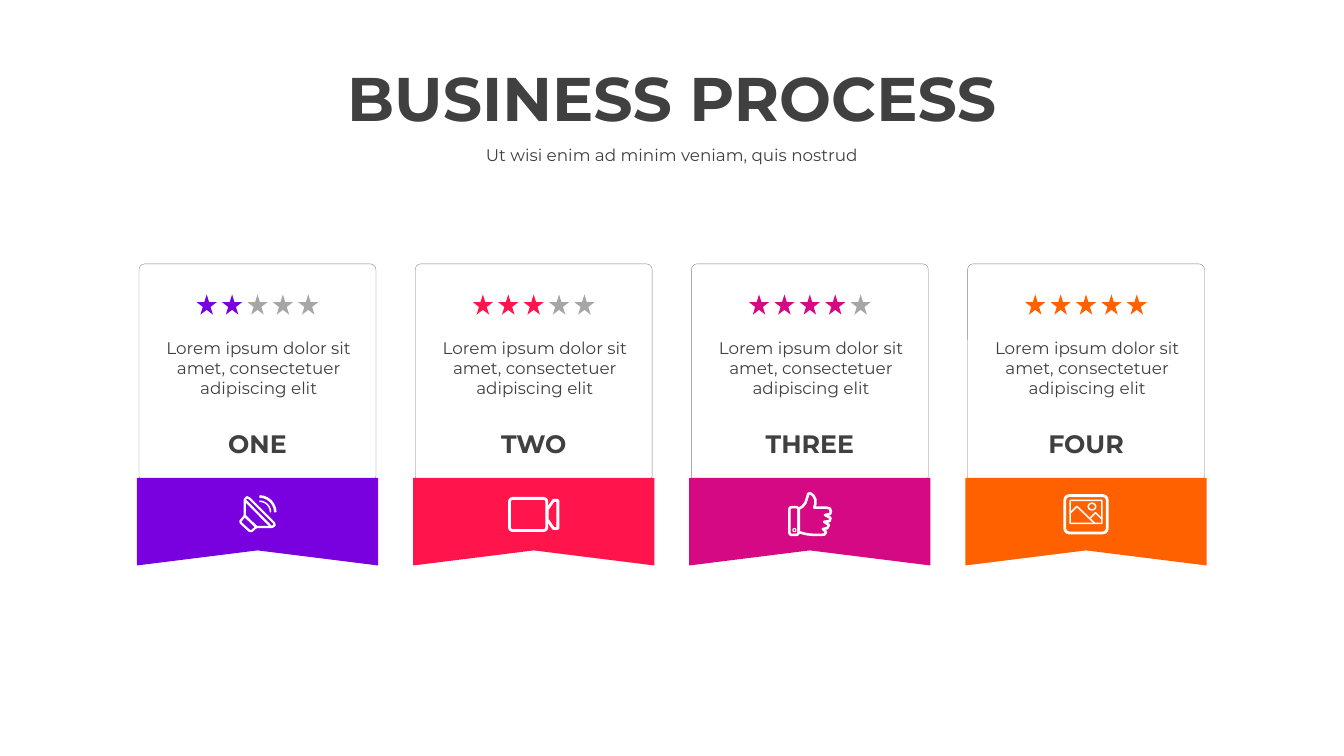
from pptx import Presentation
from pptx.dml.color import RGBColor
from pptx.enum.shapes import MSO_SHAPE as SHAPE
from pptx.enum.text import MSO_ANCHOR as ANCHOR, MSO_AUTO_SIZE as AUTO_SIZE, PP_ALIGN as ALIGN
from pptx.util import Cm, Pt

PURPLE = RGBColor(0x79, 0x00, 0xDF)
RED = RGBColor(0xFF, 0x15, 0x4C)
MAGENTA = RGBColor(0xD5, 0x09, 0x84)
ORANGE = RGBColor(0xFF, 0x60, 0x00)
WHITE = RGBColor(0xFF, 0xFF, 0xFF)
STAR_GREY = RGBColor(0xA6, 0xA6, 0xA6)
BORDER_GREY = RGBColor(0x80, 0x80, 0x80)
TEXT_GREY = RGBColor(0x40, 0x40, 0x40)

SLIDE_W, SLIDE_H = 33.87, 19.05
FIRST_CENTRE, CARD_PITCH = 6.49, 6.96
ICON_Y = 12.95
STAR_COUNT, STAR_PITCH, STAR_SIZE = 5, 0.64, 0.51
BOLD_STROKE, THIN_STROKE = 2, 1.1
DESCRIPTION = "Lorem ipsum dolor sit amet, consectetuer adipiscing elit"


class SlideBuilder:
    """Draws on one slide; lengths are centimetres, x is a horizontal centre."""

    font = "Montserrat"

    def __init__(self, slide):
        self.shapes = slide.shapes

    def paint(self, shape, fill=None, line=None, weight=1):
        shape.shadow.inherit = False
        if fill is None:
            shape.fill.background()
        else:
            shape.fill.solid()
            shape.fill.fore_color.rgb = fill
        if line is None:
            shape.line.fill.background()
        else:
            shape.line.color.rgb = line
            shape.line.width = Pt(weight)

    def preset(self, kind, x, top, width, height, radius=None, **style):
        shape = self.shapes.add_shape(
            kind, Cm(x - width / 2), Cm(top), Cm(width), Cm(height))
        if radius is not None:
            shape.adjustments[0] = radius
        self.paint(shape, **style)

    def outline(self, x, y, points, closed=True, **style):
        start, *rest = [(Cm(x + dx), Cm(y + dy)) for dx, dy in points]
        builder = self.shapes.build_freeform(*start)
        builder.add_line_segments(rest, close=closed)
        self.paint(builder.convert_to_shape(), **style)

    def text(self, words, x, top, width, height, size, bold=False, wrap=True,
             anchor=ANCHOR.TOP, spacing=None, before=0, grow=False):
        box = self.shapes.add_textbox(
            Cm(x - width / 2), Cm(top), Cm(width), Cm(height))
        frame = box.text_frame
        frame.text = words
        frame.word_wrap = wrap
        frame.vertical_anchor = anchor
        frame.auto_size = AUTO_SIZE.SHAPE_TO_FIT_TEXT if grow else AUTO_SIZE.NONE
        paragraph = frame.paragraphs[0]
        paragraph.alignment = ALIGN.CENTER
        paragraph.line_spacing = spacing
        paragraph.space_before = Pt(before)
        font = paragraph.runs[0].font
        font.name, font.size, font.bold = self.font, Pt(size), bold
        font.color.rgb = TEXT_GREY

    def icon_preset(self, kind, x, dy, width, height, weight, radius=None):
        self.preset(kind, x, ICON_Y + dy, width, height, radius,
                    line=WHITE, weight=weight)

    def icon_stroke(self, x, points, weight=BOLD_STROKE, closed=True):
        self.outline(x, ICON_Y, points, closed, line=WHITE, weight=weight)


# Icons, each placed around the centre of its ribbon
def speaker_icon(draw, x):
    cone = [(-0.32, 0.05), (-0.32, -0.36), (-0.27, -0.42), (-0.2, -0.39),
            (0.42, 0.23), (0.43, 0.29), (0.37, 0.33), (-0.03, 0.33)]
    base = [(-0.32, 0.05), (-0.43, 0.18), (-0.42, 0.23),
            (-0.2, 0.43), (-0.14, 0.43), (-0.03, 0.33)]
    draw.icon_stroke(x, cone, 1.6)
    draw.icon_stroke(x, base, 1.6)
    draw.icon_stroke(x, [(-0.3, -0.33), (0.34, 0.32)], 1.6, closed=False)
    for radius, weight in ((0.4, 1.8), (0.28, THIN_STROKE)):
        draw.icon_preset(SHAPE.ARC, x + 0.05, -0.04 - radius,
                         2 * radius, 2 * radius, weight)


def camera_icon(draw, x):
    lens = [(0.34, -0.11), (0.5, -0.34), (0.61, -0.34),
            (0.61, 0.37), (0.5, 0.37), (0.34, 0.14)]
    draw.icon_preset(SHAPE.ROUNDED_RECTANGLE, x - 0.14, -0.39, 0.94, 0.81,
                     BOLD_STROKE, 0.1)
    draw.icon_stroke(x, lens)


def thumb_icon(draw, x):
    hand = [(-0.28, -0.13), (-0.19, -0.18), (-0.11, -0.28), (-0.06, -0.43),
            (-0.04, -0.51), (0.01, -0.52), (0.09, -0.46), (0.14, -0.36),
            (0.14, -0.25), (0.11, -0.16), (0.42, -0.16), (0.51, -0.13),
            (0.53, -0.05), (0.51, 0), (0.38, 0.03), (0.52, 0.1),
            (0.5, 0.18), (0.36, 0.2), (0.48, 0.28), (0.44, 0.36),
            (0.33, 0.38), (0.41, 0.46), (0.37, 0.52), (0.29, 0.53),
            (0.09, 0.53), (-0.09, 0.51), (-0.28, 0.46)]
    draw.icon_preset(SHAPE.ROUNDED_RECTANGLE, x - 0.4, -0.17, 0.23, 0.7, 1.8, 0.25)
    draw.icon_preset(SHAPE.OVAL, x - 0.39, 0.37, 0.08, 0.08, 0.75)
    draw.icon_stroke(x, hand, 1.8)


def photo_icon(draw, x):
    draw.icon_preset(SHAPE.ROUNDED_RECTANGLE, x, -0.46, 1.07, 0.94, BOLD_STROKE, 0.12)
    draw.icon_preset(SHAPE.ROUNDED_RECTANGLE, x, -0.34, 0.8, 0.58, THIN_STROKE, 0.03)
    draw.icon_preset(SHAPE.OVAL, x + 0.15, -0.27, 0.19, 0.17, THIN_STROKE)
    draw.icon_stroke(x, [(-0.39, -0.03), (-0.23, -0.19), (0.22, 0.24)],
                     THIN_STROKE, closed=False)
    draw.icon_stroke(x, [(0.11, 0.1), (0.24, -0.03), (0.4, 0.13)],
                     THIN_STROKE, closed=False)


STEPS = [
    ("ONE", PURPLE, 2, speaker_icon, 2.01),
    ("TWO", RED, 3, camera_icon, 2.18),
    ("THREE", MAGENTA, 4, thumb_icon, 2.77),
    ("FOUR", ORANGE, 5, photo_icon, 2.44),
]
RIBBON = [(-3.04, 0), (3.04, 0), (3.04, 2.21), (0, 1.83), (-3.04, 2.21)]


def step_card(draw, x, label, colour, rating, icon, label_width):
    # Frame and ribbon
    draw.preset(SHAPE.ROUNDED_RECTANGLE, x, 6.65, 5.97, 5.49, 0.026,
                line=BORDER_GREY, weight=0.25)
    draw.outline(x, 12.04, RIBBON, fill=colour)
    icon(draw, x)

    # Rating stars
    for star in range(STAR_COUNT):
        offset = (star - (STAR_COUNT - 1) / 2) * STAR_PITCH
        draw.preset(SHAPE.STAR_5_POINT, x + offset, 7.42, STAR_SIZE, STAR_SIZE,
                    fill=colour if star < rating else STAR_GREY)

    # Wording
    draw.text(DESCRIPTION, x + 0.03, 8.38, 5.31, 1.8, 12, before=12, grow=True)
    draw.text(label, x, 10.67, label_width, 1.02, 18, bold=True, wrap=False,
              anchor=ANCHOR.MIDDLE, grow=True)


def main():
    deck = Presentation()
    deck.slide_width, deck.slide_height = Cm(SLIDE_W), Cm(SLIDE_H)
    draw = SlideBuilder(deck.slides.add_slide(deck.slide_layouts[6]))

    # Heading
    draw.text("BUSINESS PROCESS", SLIDE_W / 2, 1.6, 30, 1.85, 44,
              bold=True, spacing=0.9)
    draw.text("Ut wisi enim ad minim veniam, quis nostrud", SLIDE_W / 2, 3.61,
              24.41, 0.66, 12, anchor=ANCHOR.MIDDLE, spacing=0.9, before=12)

    # Process steps
    for position, step in enumerate(STEPS):
        step_card(draw, FIRST_CENTRE + position * CARD_PITCH, *step)

    deck.save("out.pptx")


if __name__ == "__main__":
    main()
